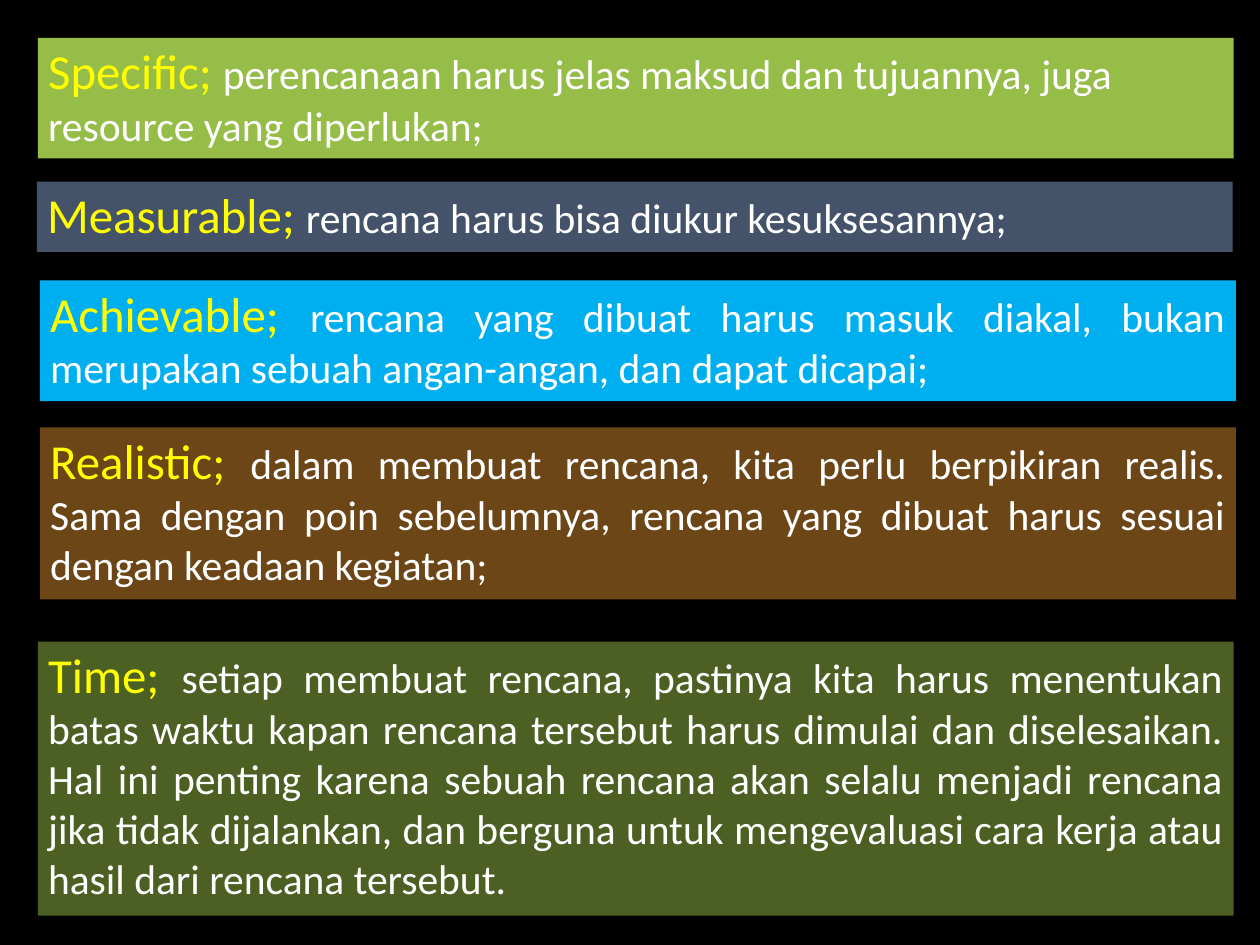
from pptx import Presentation
from pptx.dml.color import RGBColor
from pptx.enum.shapes import MSO_SHAPE
from pptx.enum.text import MSO_ANCHOR, PP_ALIGN
from pptx.util import Inches, Pt

RECTANGLE = MSO_SHAPE.RECTANGLE
TOP = MSO_ANCHOR.TOP
LEFT, JUSTIFY = PP_ALIGN.LEFT, PP_ALIGN.JUSTIFY

# Content: term, explanation, fill, alignment, left, top, height
CRITERIA = [
    ("Specific; ",
     "perencanaan harus jelas maksud dan tujuannya, juga resource yang diperlukan;",
     "96BD48", LEFT, 0.36, 0.36, 1.15),
    ("Measurable; ",
     "rencana harus bisa diukur kesuksesannya;",
     "44536A", LEFT, 0.35, 1.73, 0.67),
    ("Achievable; ",
     "rencana yang dibuat harus masuk diakal, bukan merupakan sebuah "
     "angan-angan, dan dapat dicapai;",
     "00AFEF", JUSTIFY, 0.38, 2.67, 1.15),
    ("Realistic; ",
     "dalam membuat rencana, kita perlu berpikiran realis. Sama dengan poin "
     "sebelumnya, rencana yang dibuat harus sesuai dengan keadaan kegiatan;",
     "6C4616", JUSTIFY, 0.38, 4.07, 1.64),
    ("Time; ",
     "setiap membuat rencana, pastinya kita harus menentukan batas waktu kapan "
     "rencana tersebut harus dimulai dan diselesaikan. Hal ini penting karena "
     "sebuah rencana akan selalu menjadi rencana jika tidak dijalankan, dan "
     "berguna untuk mengevaluasi cara kerja atau hasil dari rencana tersebut.",
     "4B6022", JUSTIFY, 0.36, 6.11, 2.61),
]
PANEL_WIDTH = 11.39
SIDE_INSET = 0.1
TOP_INSET = 0.03

THEME = {
    "font": "Calibri",
    "background": "000000",
    "term": ("FFFF00", 33.5),
    "explanation": ("FFFFFF", 28.5),
}


def add_criterion(slide, term, explanation, fill, alignment, left, top, height):
    panel = slide.shapes.add_shape(
        RECTANGLE, Inches(left), Inches(top), Inches(PANEL_WIDTH), Inches(height))
    panel.shadow.inherit = False
    panel.fill.solid()
    panel.fill.fore_color.rgb = RGBColor.from_string(fill)
    panel.line.fill.background()

    frame = panel.text_frame
    frame.word_wrap = True
    frame.vertical_anchor = TOP
    frame.margin_left = frame.margin_right = Inches(SIDE_INSET)
    frame.margin_top, frame.margin_bottom = Inches(TOP_INSET), 0

    paragraph = frame.paragraphs[0]
    paragraph.alignment = alignment
    for role, words in (("term", term), ("explanation", explanation)):
        run = paragraph.add_run()
        run.text = words
        color, size = THEME[role]
        run.font.name = THEME["font"]
        run.font.size = Pt(size)
        run.font.color.rgb = RGBColor.from_string(color)


def main():
    deck = Presentation()
    deck.slide_width, deck.slide_height = Inches(12), Inches(9)
    slide = deck.slides.add_slide(deck.slide_layouts[6])

    # Black background
    background = slide.background.fill
    background.solid()
    background.fore_color.rgb = RGBColor.from_string(THEME["background"])

    # One panel per criterion
    for criterion in CRITERIA:
        add_criterion(slide, *criterion)

    deck.save("out.pptx")


if __name__ == "__main__":
    main()
